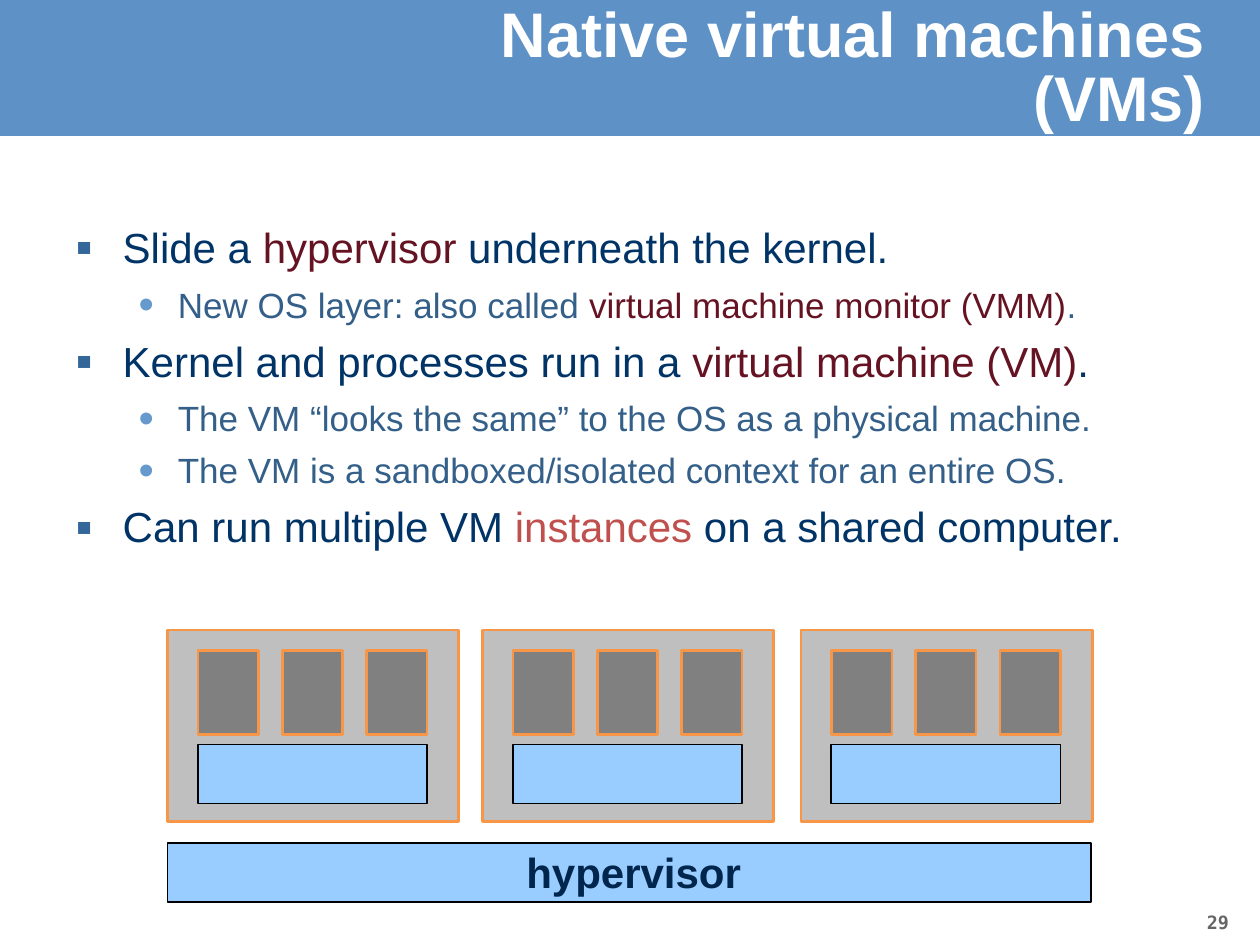
import pptx
import pptx.util
from lxml import etree
from pptx.dml.color import RGBColor
from pptx.enum.shapes import MSO_SHAPE
from pptx.enum.text import MSO_ANCHOR, MSO_AUTO_SIZE, PP_ALIGN
from pptx.oxml.ns import qn
from pptx.util import Cm

COLORS = {
    "band": "5E91C5", "white": "FFFFFF", "title_shadow": "336699",
    "text": "003366", "subtext": "335F89", "term": "651222", "accent": "C0504D",
    "bullet": "336699", "subbullet": "6699CC", "page": "666666",
    "vm": "BFBFBF", "process": "808080", "orange": "F79646",
    "system": "99CCFF", "black": "000000", "label": "00264D",
}

# Per level: size, text colour, left margin, bullet, bullet colour, bullet size
LEVELS = [
    (24, "text", 0.95, "▪", "bullet", 115),
    (20, "subtext", 2.06, "•", "subbullet", 125),
]
HANGING = [0.95, 0.79]

BODY = [
    (0, [("Slide a ", None), ("hypervisor", "term"), (" underneath the kernel.", None)]),
    (1, [("New OS layer: also called ", None),
         ("virtual machine monitor (VMM)", "term"), (".", None)]),
    (0, [("Kernel and processes run in a ", None),
         ("virtual machine (VM)", "term"), (".", None)]),
    (1, [("The VM “looks the same” to the OS as a physical machine.", None)]),
    (1, [("The VM is a sandboxed/isolated context for an entire OS.", None)]),
    (0, [("Can run multiple VM ", None), ("instances ", "accent"),
         ("on a shared computer.", None)]),
]


def add_text(p, text, size=24, color="text", bold=False, font="Arial"):
    r = p.add_run()
    r.text = text
    r.font.size = pptx.util.Pt(size)
    r.font.bold = bold
    r.font.name = font
    r.font.color.rgb = RGBColor.from_string(COLORS[color])
    return r


def sub(parent, tag, **attrs):
    return etree.SubElement(parent, qn(tag), attrs)


def place(sp, x, y, w, h):
    sp.left, sp.top, sp.width, sp.height = Cm(x), Cm(y), Cm(w), Cm(h)


def add_box(s, x, y, w, h, fill, line=None, weight=1.5, kind=MSO_SHAPE.RECTANGLE):
    sp = s.shapes.add_shape(kind, Cm(x), Cm(y), Cm(w), Cm(h))
    sp.shadow.inherit = False
    sp.fill.solid()
    sp.fill.fore_color.rgb = RGBColor.from_string(COLORS[fill])
    if line:
        sp.line.color.rgb = RGBColor.from_string(COLORS[line])
        sp.line.width = pptx.util.Pt(weight)
    else:
        sp.line.fill.background()
    return sp


def add_system(s, x, y, w, h):
    return add_box(s, x, y, w, h, "system", "black", 1, MSO_SHAPE.FLOWCHART_PROCESS)


def add_label(s, x, y, w, h, text, wrap=True, **fmt):
    tf = s.shapes.add_textbox(Cm(x), Cm(y), Cm(w), Cm(h)).text_frame
    tf.word_wrap = wrap
    add_text(tf.paragraphs[0], text, **fmt)


def add_header(s, x, y, w, h):
    title = s.shapes.title
    band = add_box(s, x, y, w, h, "band")
    title.element.addprevious(band.element)
    place(title, x + 6.35, y + 0.36, 18.19, 2.11)
    tf = title.text_frame
    tf.auto_size = MSO_AUTO_SIZE.NONE
    tf.vertical_anchor = MSO_ANCHOR.MIDDLE
    p = tf.paragraphs[0]
    p.alignment = PP_ALIGN.RIGHT
    p.line_spacing = 0.85
    r = add_text(p, "Native virtual machines (VMs)", size=36, color="white", bold=True)
    # Text shadow goes right after the run's fill
    effects = etree.Element(qn("a:effectLst"))
    shadow = sub(effects, "a:outerShdw", dist="38100", dir="2700000", algn="tl")
    sub(shadow, "a:srgbClr", val=COLORS["title_shadow"])
    r.font.fill  # the solid fill is already in place
    r.font._element.find(qn("a:solidFill")).addnext(effects)


def format_item(p, level):
    _, _, margin, bullet, color, percent = LEVELS[level]
    p.level = level
    p.line_spacing = 0.9
    pPr = p._p.get_or_add_pPr()
    pPr.set("marL", str(Cm(margin)))
    pPr.set("indent", str(-Cm(HANGING[level])))
    for tag in ("a:spcBef", "a:spcAft"):
        sub(sub(pPr, tag), "a:spcPct", val="20000")
    sub(sub(pPr, "a:buClr"), "a:srgbClr", val=COLORS[color])
    sub(pPr, "a:buSzPct", val=str(percent * 1000))
    sub(pPr, "a:buFont", typeface="Arial")
    sub(pPr, "a:buChar", char=bullet)


def add_body(s, x, y, w, h):
    body = s.placeholders[1]
    place(body, x, y, w, h)
    tf = body.text_frame
    tf.auto_size = MSO_AUTO_SIZE.NONE
    for i, (level, parts) in enumerate(BODY):
        p = tf.paragraphs[0] if i == 0 else tf.add_paragraph()
        format_item(p, level)
        size, color = LEVELS[level][:2]
        for text, emphasis in parts:
            add_text(p, text, size=size, color=emphasis or color)


def add_vm(s, x, y, w, h):
    add_box(s, x, y, w, h, "vm", "orange")
    for i in range(3):
        add_box(s, x + 0.61 + 1.7 * i, y + 0.41, 1.22, 1.7, "process", "orange")
    add_system(s, x + 0.61, y + 2.31, w - 1.25, 1.19)


def add_diagram(s, x, y, w, h):
    # Virtual machines side by side
    for dx in (0, 6.35, 12.77):
        add_vm(s, x + dx, y, 5.87, 3.86)
    # Shared hypervisor layer
    add_system(s, x, y + h - 1.19, w, 1.19)
    add_label(s, x + 6.98, y + h - 1.24, 4.88, 1.27, "hypervisor",
              color="label", bold=True)


def main():
    prs = pptx.Presentation()
    prs.slide_width, prs.slide_height = Cm(25.4), Cm(19.05)
    s = prs.slides.add_slide(prs.slide_layouts[1])
    add_header(s, 0, 0, 25.4, 2.74)
    add_body(s, 1.27, 4.45, 23.29, 7.82)
    add_diagram(s, 3.38, 12.7, 18.62, 5.49)
    # Page number
    add_label(s, 24.08, 18.24, 1.3, 1.02, "29", wrap=False, size=10.5,
              color="page", bold=True, font="DejaVu Sans Mono")
    prs.save("out.pptx")


if __name__ == "__main__":
    main()
